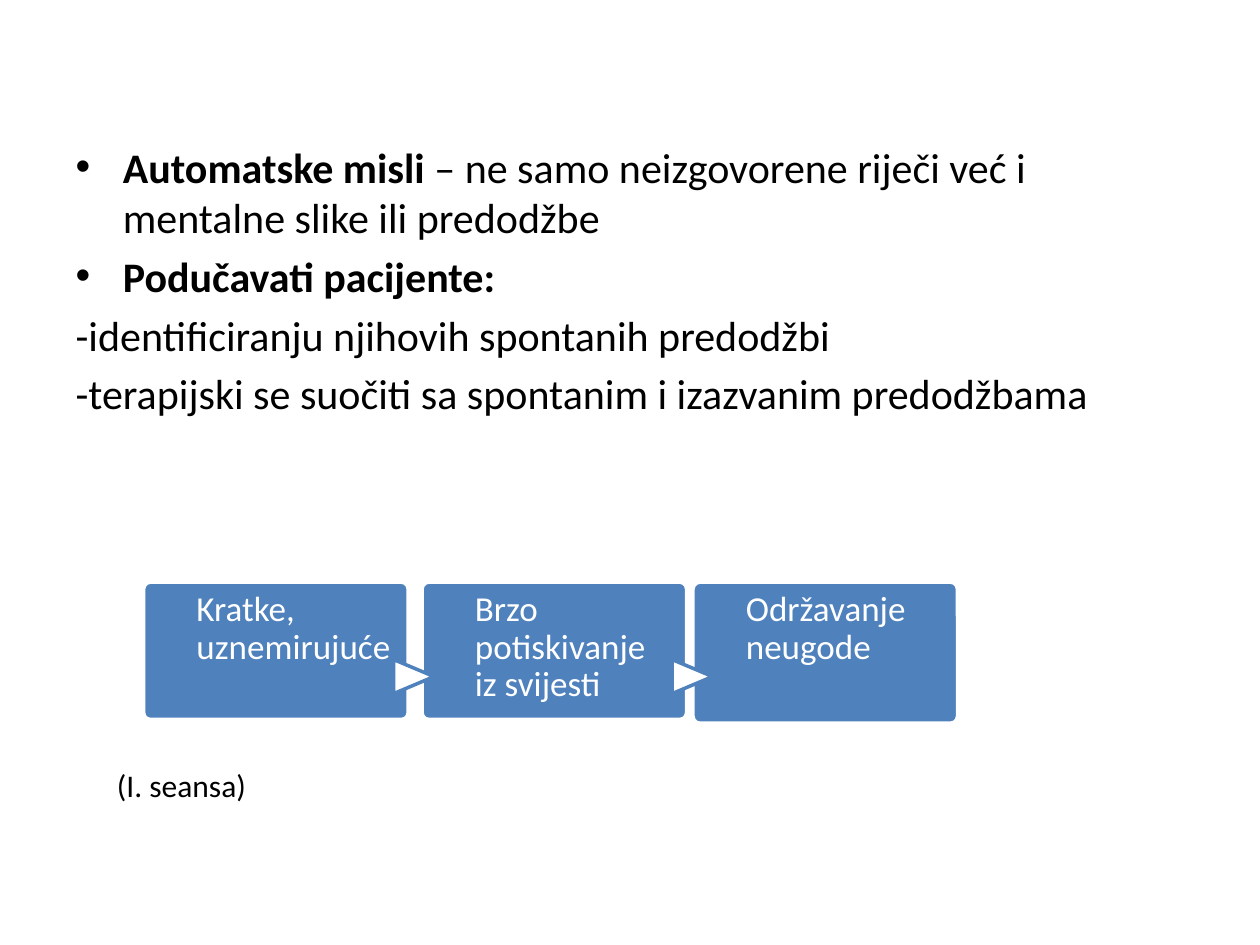
from pptx import Presentation
from pptx.dml.color import RGBColor
from pptx.enum.shapes import MSO_SHAPE
from pptx.enum.text import MSO_ANCHOR, MSO_AUTO_SIZE
from pptx.oxml.xmlchemy import OxmlElement
from pptx.util import Inches, Pt

BLUE, WHITE, BLACK = "4F81BD", "FFFFFF", "000000"
CELL = 0.1


def color(code):
    return RGBColor.from_string(code)


def write(par, text, size=24, ink=BLACK, bold=False, font="Calibri"):
    run = par.add_run()
    run.text = text
    run.font.name = font
    run.font.size = Pt(size)
    run.font.bold = bold
    run.font.color.rgb = color(ink)


class Deck:
    def __init__(self):
        self.file = Presentation()
        self.file.slide_width = Inches(10)
        self.file.slide_height = Inches(7.5)
        self.slide = self.file.slides.add_slide(self.file.slide_layouts[1])
        title = self.slide.shapes.title.element
        title.getparent().remove(title)

    def area(self, *cells):
        return [Inches(round(cell * CELL, 2)) for cell in cells]

    def body(self, cells, items):
        body = self.slide.placeholders[1]
        body.left, body.top, body.width, body.height = self.area(*cells)
        frame = body.text_frame
        for spot, (strong, plain) in enumerate(items):
            par = frame.add_paragraph() if spot else frame.paragraphs[0]
            par.space_before = Pt(4.8)
            if strong:
                write(par, strong, bold=True)
            else:
                props = par._p.get_or_add_pPr()
                props.set("marL", "0")
                props.set("indent", "0")
                props.append(OxmlElement("a:buNone"))
            if plain:
                write(par, plain)

    def shape(self, kind, cells, fill, line):
        item = self.slide.shapes.add_shape(kind, *self.area(*cells))
        item.shadow.inherit = False
        item.fill.solid()
        item.fill.fore_color.rgb = color(fill)
        item.line.color.rgb = color(line)
        item.line.width = Pt(2)
        return item

    def box(self, cells):
        item = self.shape(MSO_SHAPE.ROUNDED_RECTANGLE, cells, BLUE, WHITE)
        item.adjustments[0] = 0.05

    def arrow(self, cells):
        item = self.shape(MSO_SHAPE.FLOWCHART_EXTRACT, cells, WHITE, BLUE)
        item.rotation = 90

    def text(self, cells, words, **look):
        frame = self.slide.shapes.add_textbox(*self.area(*cells)).text_frame
        frame.word_wrap = True
        frame.vertical_anchor = MSO_ANCHOR.TOP
        write(frame.paragraphs[0], words, **look)
        return frame

    def label(self, cells, words):
        frame = self.text(cells, words, size=20, ink=WHITE)
        frame.margin_left = frame.margin_right = frame.margin_bottom = 0
        frame.margin_top = Inches(0.07)
        frame.paragraphs[0].line_spacing = 0.9

    def step(self, left, high, words, arrow=None):
        top = 46.2
        self.box((left, top, 21, high))
        if arrow:
            self.arrow((arrow, 52.1, 2.7, 3.2))
        self.label((left + 4.2, top, 15.7, high), words)


def main():
    deck = Deck()
    deck.body((5, 10.7, 90, 56.3), [
        ("Automatske misli ",
         "– ne samo neizgovorene riječi već i mentalne slike ili predodžbe"),
        ("Podučavati pacijente:", ""),
        ("", "-identificiranju njihovih spontanih predodžbi"),
        ("", "-terapijski se suočiti sa spontanim i izazvanim predodžbama"),
    ])
    deck.step(11.4, 10.9, "Kratke, uznemirujuće")
    deck.step(33.5, 10.9, "Brzo potiskivanje iz svijesti", arrow=31.5)
    deck.step(55, 11.2, "Održavanje neugode", arrow=53.6)
    note = deck.text((8.3, 60.3, 35.4, 4), "(I. seansa)", size=18)
    note.auto_size = MSO_AUTO_SIZE.SHAPE_TO_FIT_TEXT
    deck.file.save("out.pptx")


if __name__ == "__main__":
    main()
